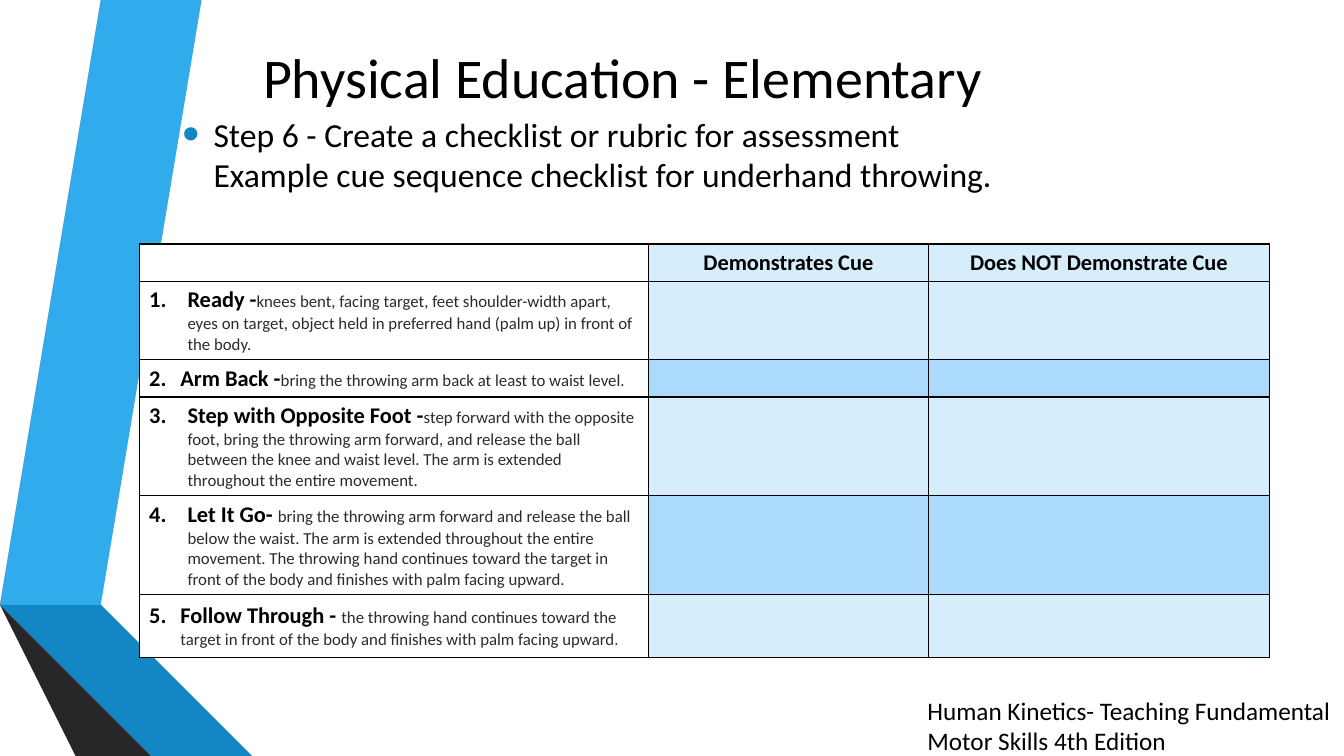
"""Builds a slide with a cue sequence checklist for underhand throwing."""
from lxml import etree
from pptx import Presentation
from pptx import util as u
from pptx.dml.color import RGBColor
from pptx.enum import text
from pptx.oxml.ns import qn


def paint(fill, color):
    fill.solid()
    fill.fore_color.rgb = RGBColor.from_string(color)


def write(frame, *runs, align="LEFT", anchor="TOP", hang=0, marks=()):
    """Fill a frame with (text, size, colour, bold) runs."""
    frame.word_wrap = True
    frame.vertical_anchor = text.MSO_ANCHOR[anchor]
    para = frame.paragraphs[0]
    para.alignment = text.PP_ALIGN[align]
    props = para._p.get_or_add_pPr()
    if hang:
        props.set("marL", str(u.Inches(hang)))
        props.set("indent", str(-u.Inches(hang)))
    for tag, attrs in marks:
        mark = etree.SubElement(props, qn(tag), attrs)
        if tag == "a:buClr":
            etree.SubElement(mark, qn("a:srgbClr"), val=BLUE)
    for words, size, color, bold in runs:
        for i, line in enumerate(words.split("\n")):
            if i:
                para.add_line_break()
            run = para.add_run()
            run.text = line
            font = run.font
            font.name, font.size, font.bold = "Calibri", u.Pt(size), bold
            paint(font.fill, color)


BLACK, GREY, WHITE, BLUE = "000000", "2A2B2A", "FFFFFF", "1287C3"
PALE, DEEP = "D6EEFB", "ABDAFC"

deck = Presentation()
deck.slide_width, deck.slide_height = u.Inches(13.33), u.Inches(7.5)
slide = deck.slides.add_slide(deck.slide_layouts[5])
paint(slide.background.fill, WHITE)
items = slide.shapes

bands = [
    ("30ACEC", [(0.5, 5.78), (0.77, 5.83), (1.73, 0), (1.45, 0)]),
    ("595959", [(1.39, 0), (1.11, 0), (0.16, 5.73), (0.44, 5.77)]),
    ("262626", [(0.16, 5.73), (1.45, 7.5), (1.51, 7.5)]),
    ("0C5A82", [(0.5, 5.79), (2.08, 7.5), (2.14, 7.5)]),
    (BLUE, [(0.5, 5.79), (2.14, 7.5), (2.83, 7.5), (0.77, 5.83), (0.5, 5.78)]),
    ("404040", [(2.02, 7.5), (0.48, 5.83), (0.43, 5.77), (0.16, 5.73), (1.51, 7.5)]),
]
for color, points in bands:
    path = items.build_freeform(*points[0], scale=u.Inches(1))
    path.add_line_segments(points[1:])
    band = path.convert_to_shape()
    band.shadow.inherit = False
    paint(band.fill, color)
    band.line.fill.background()

title = items.title
title.left, title.top = u.Inches(1.71), u.Inches(0.24)
title.width, title.height = u.Inches(8.93), u.Inches(1.02)
write(title.text_frame, ("Physical Education - Elementary", 40, BLACK, False),
      align="CENTER", anchor="MIDDLE")

step = items.add_textbox(u.Inches(1.71), u.Inches(1.08), u.Inches(10.96), u.Inches(0.91))
write(step.text_frame,
      ("Step 6 - Create a checklist or rubric for assessment\n"
       "Example cue sequence checklist for underhand throwing.", 24, BLACK, False),
      hang=0.31,
      marks=[("a:buClr", {}), ("a:buSzPct", {"val": "145000"}),
             ("a:buFont", {"typeface": "Arial"}), ("a:buChar", {"char": "•"})])

heads = ["", "Demonstrates Cue", "Does NOT Demonstrate Cue"]
cues = [
    ("Ready -", "knees bent, facing target, feet shoulder-width apart, eyes on target, "
     "object held in preferred hand (palm up) in front of the body.", 0.38),
    ("Arm Back -", "bring the throwing arm back at least to waist level.", 0.31),
    ("Step with Opposite Foot -", "step forward with the opposite foot, bring the throwing "
     "arm forward, and release the ball between the knee and waist level. The arm is "
     "extended throughout the entire movement.", 0.38),
    ("Let It Go- ", "bring the throwing arm forward and release the ball below the waist. "
     "The arm is extended throughout the entire movement. The throwing hand continues "
     "toward the target in front of the body and finishes with palm facing upward.", 0.38),
    ("Follow Through - ", "the throwing hand continues toward the target in front of the "
     "body and finishes with palm facing upward.", 0.31),
]
widths = [5.05, 2.78, 3.38]
heights = [0.37, 0.78, 0.37, 0.98, 0.98, 0.62]
grid = items.add_table(len(heights), len(widths), u.Inches(1.38), u.Inches(2.42),
                       u.Inches(sum(widths)), u.Inches(sum(heights))).table
for col, width in zip(grid.columns, widths):
    col.width = u.Inches(width)
for r, height in enumerate(heights):
    grid.rows[r].height = u.Inches(height)
    for c in range(len(widths)):
        cell = grid.cell(r, c)
        edges = cell._tc.get_or_add_tcPr()
        for side in "LRTB":
            edge = etree.SubElement(edges, qn("a:ln" + side), w=str(u.Pt(1)))
            fill = etree.SubElement(edge, qn("a:solidFill"))
            etree.SubElement(fill, qn("a:srgbClr"), val=BLACK)
        shade = DEEP if r in (2, 4) else PALE
        paint(cell.fill, shade if c else WHITE)
        if r and not c:
            name, cue, hang = cues[r - 1]
            write(cell.text_frame, (name, 16, BLACK, True), (cue, 12, GREY, False),
                  hang=hang, marks=[("a:buFont", {"typeface": "+mj-lt"}),
                                    ("a:buAutoNum", {"type": "arabicPeriod",
                                                     "startAt": str(r)})])
            cell.vertical_anchor = text.MSO_ANCHOR.MIDDLE
        elif c and not r:
            write(cell.text_frame, (heads[c], 16, BLACK, True), align="CENTER")
        else:
            blank = cell.text_frame.paragraphs[0]._p
            etree.SubElement(blank, qn("a:endParaRPr"), sz="1600")

credit = items.add_textbox(u.Inches(9.1), u.Inches(6.85), u.Inches(4.22), u.Inches(0.71))
write(credit.text_frame,
      ("Human Kinetics- Teaching Fundamental Motor Skills 4th Edition", 18, BLACK, False))

deck.save("out.pptx")
